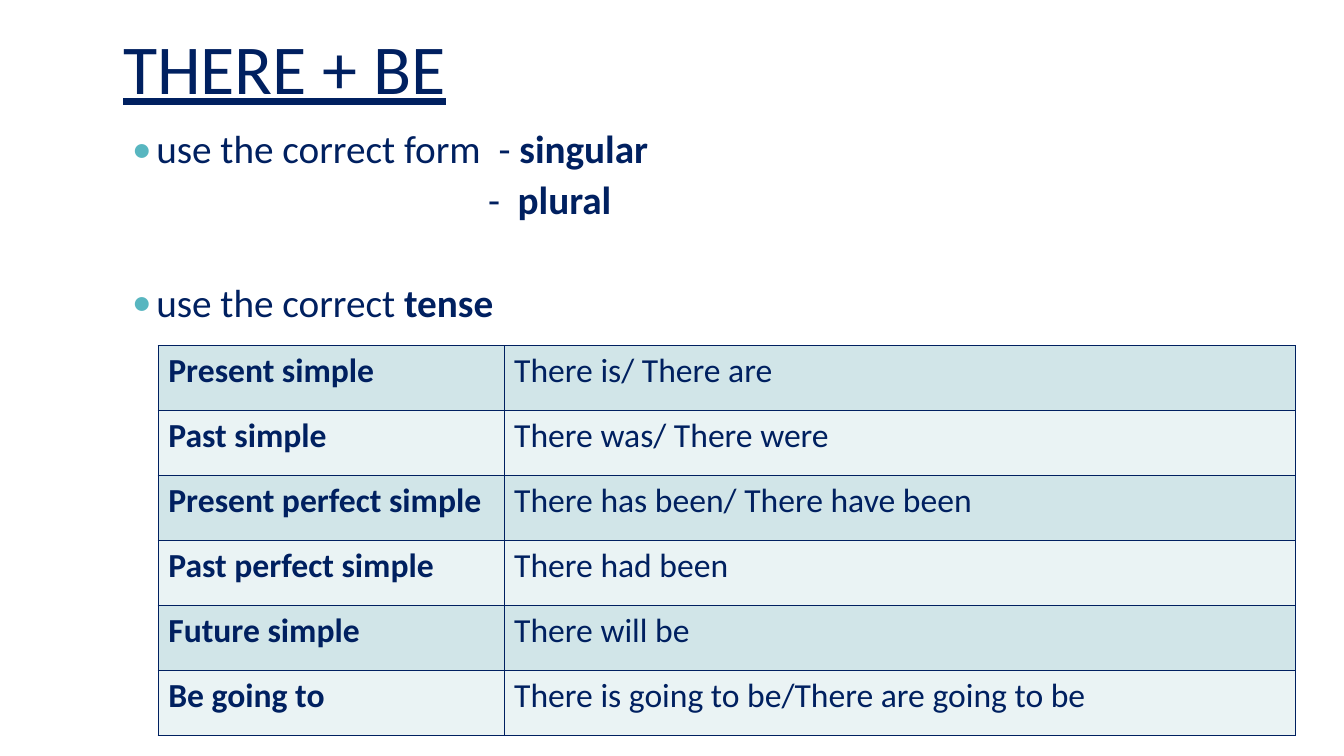
from lxml import etree
from pptx import Presentation
from pptx.dml.color import RGBColor
from pptx.enum.text import MSO_ANCHOR, MSO_AUTO_SIZE, PP_ALIGN
from pptx.oxml.ns import qn
from pptx.util import Inches, Pt

LEFT = PP_ALIGN.LEFT
TOP, MIDDLE = MSO_ANCHOR.TOP, MSO_ANCHOR.MIDDLE
NO_FIT = MSO_AUTO_SIZE.NONE
TITLE_ONLY = 5

# Content
TITLE = "THERE + BE"
# Each point: runs of (text, bold), bullet, left indent in inches, space before in points
POINTS = [
    ([("use the correct form  - ", False), ("singular", True)], True, 0.38, 2),
    ([("-  ", False), ("plural", True)], False, 3.67, 2),
    ([("use the correct ", False), ("tense", True)], True, 0.38, 39),
]
TENSES = [
    ("Present simple", "There is/ There are"),
    ("Past simple", "There was/ There were"),
    ("Present perfect simple", "There has been/ There have been"),
    ("Past perfect simple", "There had been"),
    ("Future simple", "There will be"),
    ("Be going to", "There is going to be/There are going to be"),
]

# Style and layout
FONT = "Calibri"
COLORS = {"navy": "002060", "teal": "58B6C0", "band": "D1E5E8", "pale": "EAF3F4"}
SLIDE_WIDTH, SLIDE_HEIGHT = 13.33, 7.5
TEXT_LEFT = 1.12
TABLE_LEFT, TABLE_TOP = 1.57, 3.43
COLUMN_WIDTHS = (3.43, 7.85)
ROW_HEIGHT = 0.645
BULLET_HANG = 0.24


def color(name):
    return RGBColor.from_string(COLORS[name])


def add_text(paragraph, text, size, bold=False, underline=False):
    run = paragraph.add_run()
    run.text = text
    font = run.font
    font.name, font.size, font.bold = FONT, Pt(size), bold
    font.underline = underline
    font.color.rgb = color("navy")


def add_bullet(properties):
    properties.set("indent", str(Inches(-BULLET_HANG)))
    bullet_color = etree.SubElement(properties, qn("a:buClr"))
    etree.SubElement(bullet_color, qn("a:srgbClr"), val=COLORS["teal"])
    etree.SubElement(properties, qn("a:buFont"), typeface=FONT)
    etree.SubElement(properties, qn("a:buChar"), char="•")


def add_borders(cell):
    properties = cell._tc.get_or_add_tcPr()
    for side in ("lnL", "lnR", "lnT", "lnB"):
        line = etree.SubElement(properties, qn(f"a:{side}"), w=str(Pt(1)))
        fill = etree.SubElement(line, qn("a:solidFill"))
        etree.SubElement(fill, qn("a:srgbClr"), val=COLORS["navy"])


def add_title(slide):
    title = slide.shapes.title
    title.left, title.top = Inches(TEXT_LEFT), 0
    title.width, title.height = Inches(10.63), Inches(1.47)
    frame = title.text_frame
    frame.vertical_anchor, frame.auto_size = MIDDLE, NO_FIT
    paragraph = frame.paragraphs[0]
    paragraph.alignment, paragraph.line_spacing = LEFT, 0.8
    add_text(paragraph, TITLE, 50, underline=True)


def add_points(slide):
    box = slide.shapes.add_textbox(
        Inches(TEXT_LEFT), Inches(1.24), Inches(11.55), Inches(2.1))
    frame = box.text_frame
    frame.word_wrap, frame.vertical_anchor = True, TOP
    frame.margin_left = frame.margin_right = Inches(0.05)
    for index, (runs, bulleted, indent, space_before) in enumerate(POINTS):
        paragraph = frame.add_paragraph() if index else frame.paragraphs[0]
        paragraph.line_spacing = 0.9
        paragraph.space_before, paragraph.space_after = Pt(space_before), Pt(4)
        properties = paragraph._p.get_or_add_pPr()
        properties.set("marL", str(Inches(indent)))
        if bulleted:
            add_bullet(properties)
        for text, bold in runs:
            add_text(paragraph, text, 28, bold=bold)


def add_tense_table(slide):
    table = slide.shapes.add_table(
        len(TENSES), len(COLUMN_WIDTHS), Inches(TABLE_LEFT), Inches(TABLE_TOP),
        Inches(sum(COLUMN_WIDTHS)), Inches(ROW_HEIGHT * len(TENSES))).table
    for column, width in zip(table.columns, COLUMN_WIDTHS):
        column.width = Inches(width)
    for row_index, texts in enumerate(TENSES):
        table.rows[row_index].height = Inches(ROW_HEIGHT)
        for column_index, text in enumerate(texts):
            cell = table.cell(row_index, column_index)
            add_borders(cell)
            cell.fill.solid()
            cell.fill.fore_color.rgb = color("pale" if row_index % 2 else "band")
            add_text(cell.text_frame.paragraphs[0], text, 24, bold=column_index == 0)


def main():
    presentation = Presentation()
    presentation.slide_width = Inches(SLIDE_WIDTH)
    presentation.slide_height = Inches(SLIDE_HEIGHT)
    slide = presentation.slides.add_slide(presentation.slide_layouts[TITLE_ONLY])
    add_title(slide)
    add_points(slide)
    add_tense_table(slide)
    presentation.save("out.pptx")


if __name__ == "__main__":
    main()
